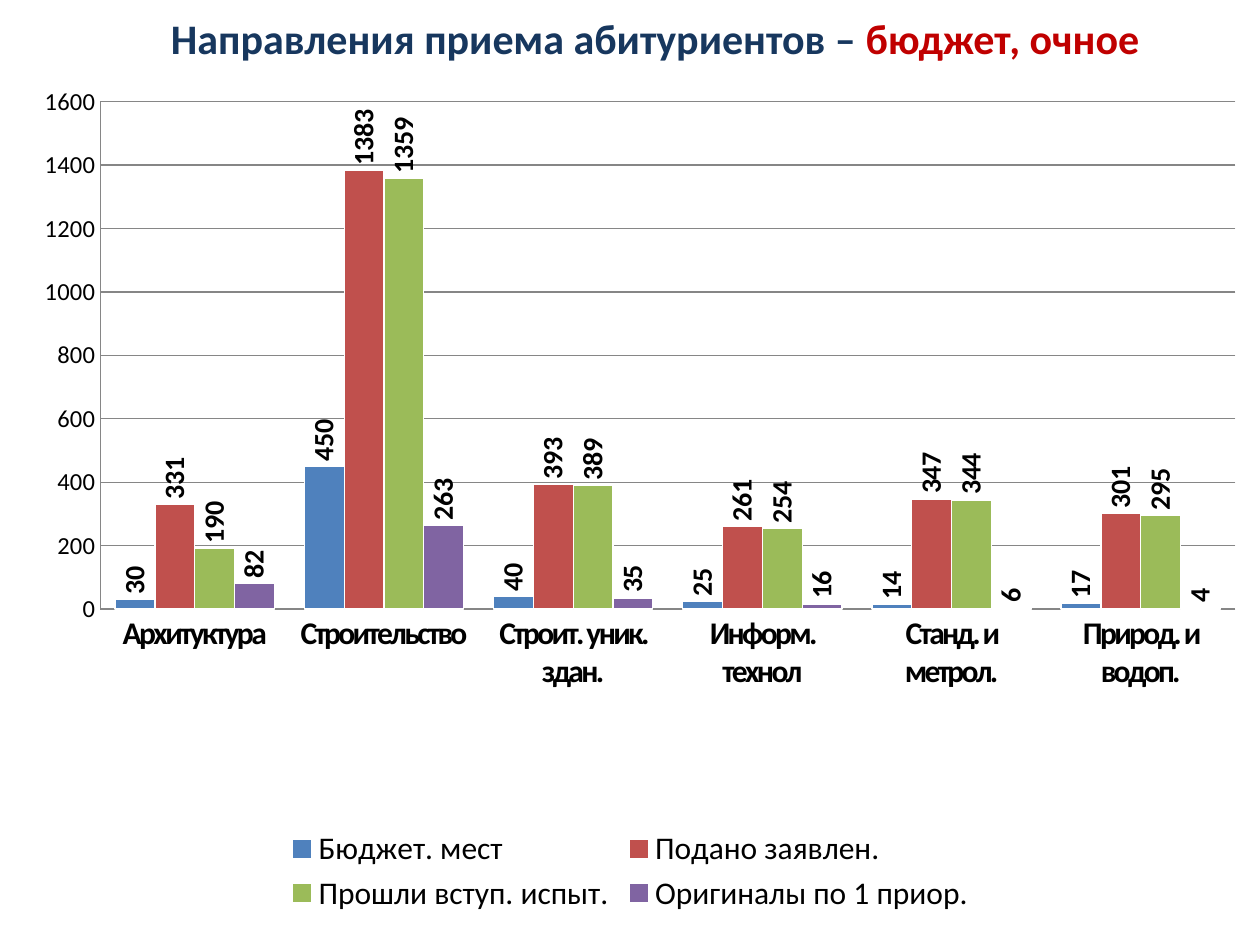
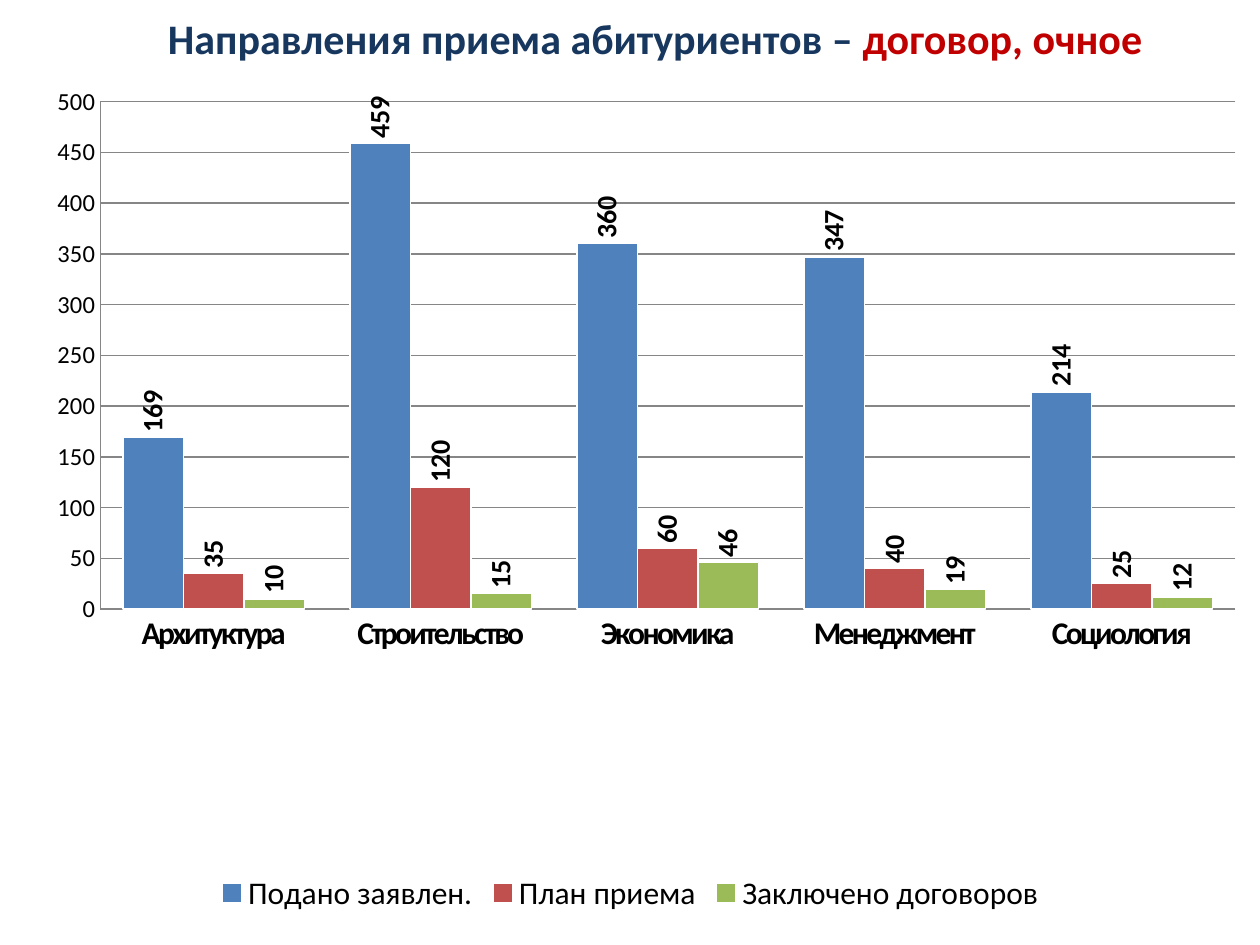
from lxml import etree
from pptx import Presentation
from pptx.chart.data import CategoryChartData
from pptx.dml.color import RGBColor
from pptx.enum.chart import XL_CHART_TYPE, XL_LABEL_POSITION, XL_LEGEND_POSITION, XL_TICK_MARK
from pptx.enum.text import MSO_ANCHOR, PP_ALIGN
from pptx.oxml.ns import qn
from pptx.util import Inches, Pt

COLUMNS = XL_CHART_TYPE.COLUMN_CLUSTERED
OUTSIDE_END = XL_LABEL_POSITION.OUTSIDE_END
LEGEND_BOTTOM = XL_LEGEND_POSITION.BOTTOM
NO_TICK = XL_TICK_MARK.NONE
MIDDLE = MSO_ANCHOR.MIDDLE
CENTER = PP_ALIGN.CENTER

# Shared style
FONT = "Calibri"
BLACK, WHITE, GRID = "000000", "FFFFFF", "868686"
NAVY, CRIMSON = "17375E", "C00000"
SERIES_COLORS = ["4F81BD", "C0504D", "9BBB59", "8064A2"]
TITLE_LEAD = "Направления приема абитуриентов – "

# Shared boxes: left, top, width, height
TITLE_BOX = (0.91, 0.05, 8.58, 0.5)
CHART_BOX = (0.2, 0.6, 9.61, 6.69)
PLOT_AREA = {"x": 0.062, "y": 0.031, "w": 0.938, "h": 0.602}

ADMISSIONS = [
    {
        "form": "бюджет, очное",
        "top": 1600, "step": 200,
        "fields": ["Архитуктура", "Строительство", "Строит. уник. здан.",
                   "Информ. технол", "Станд. и метрол.", "Природ. и водоп."],
        "counts": {
            "Бюджет. мест": [30, 450, 40, 25, 14, 17],
            "Подано заявлен.": [331, 1383, 393, 261, 347, 301],
            "Прошли вступ. испыт.": [190, 1359, 389, 254, 344, 295],
            "Оригиналы по 1 приор.": [82, 263, 35, 16, 6, 4],
        },
    },
    {
        "form": "договор, очное",
        "top": 500, "step": 50,
        "fields": ["Архитуктура", "Строительство", "Экономика",
                   "Менеджмент", "Социология"],
        "counts": {
            "Подано заявлен.": [169, 459, 360, 347, 214],
            "План приема": [35, 120, 60, 40, 25],
            "Заключено договоров": [10, 15, 46, 19, 12],
        },
    },
]


def rgb(color):
    return RGBColor.from_string(color)


def style_font(font, size, color=BLACK, bold=False):
    font.name = FONT
    font.size = Pt(size)
    font.bold = bold
    font.color.rgb = rgb(color)


def style_line(line, color, width=0.75):
    line.color.rgb = rgb(color)
    line.width = Pt(width)


def rotate_text(part, degrees):
    body = part._element.find(qn("c:txPr")).find(qn("a:bodyPr"))
    body.set("rot", str(degrees * 60000))
    body.set("vert", "horz")


def add_title(slide, box, form):
    title = slide.shapes.title
    title.left, title.top, title.width, title.height = map(Inches, box)
    frame = title.text_frame
    frame.word_wrap = True
    frame.vertical_anchor = MIDDLE
    heading = frame.paragraphs[0]
    heading.alignment = CENTER
    for text, color in ((TITLE_LEAD, NAVY), (form, CRIMSON)):
        run = heading.add_run()
        run.text = text
        style_font(run.font, 24, color, True)


def place_plot_area(chart):
    plot_area = chart._chartSpace.chart.plotArea
    for old in plot_area.findall(qn("c:layout")):
        plot_area.remove(old)
    layout = etree.Element(qn("c:layout"))
    manual = etree.SubElement(layout, qn("c:manualLayout"))
    settings = {"layoutTarget": "inner", "xMode": "edge", "yMode": "edge", **PLOT_AREA}
    for tag, value in settings.items():
        etree.SubElement(manual, qn(f"c:{tag}")).set("val", str(value))
    plot_area.insert(0, layout)


def style_axes(chart, top, step):
    fields, counts = chart.category_axis, chart.value_axis
    for axis in (fields, counts):
        axis.major_tick_mark = axis.minor_tick_mark = NO_TICK
        style_line(axis.format.line, GRID)
    # Tightly spaced, level category names
    style_font(fields.tick_labels.font, 18, bold=True)
    rotate_text(fields, 0)
    fields._element.find(".//" + qn("a:defRPr")).set("spc", "-150")
    # Value scale with gridlines
    style_font(counts.tick_labels.font, 14)
    counts.minimum_scale, counts.maximum_scale = 0, top
    counts.major_unit = step
    counts.has_major_gridlines = True
    style_line(counts.major_gridlines.format.line, GRID)


def style_columns(plot):
    plot.gap_width = 75
    plot.overlap = 0
    plot.vary_by_categories = False
    for series, color in zip(plot.series, SERIES_COLORS):
        series.format.fill.solid()
        series.format.fill.fore_color.rgb = rgb(color)
        style_line(series.format.line, WHITE)
        labels = series.data_labels
        labels.show_value = True
        labels.position = OUTSIDE_END
        style_font(labels.font, 16, bold=True)
        rotate_text(labels, -90)


def add_admission_chart(slide, box, admission):
    data = CategoryChartData()
    data.categories = admission["fields"]
    for name, values in admission["counts"].items():
        data.add_series(name, values)
    chart = slide.shapes.add_chart(COLUMNS, *map(Inches, box), data).chart
    chart.has_title = False
    style_font(chart.font, 18)
    chart.has_legend = True
    chart.legend.position = LEGEND_BOTTOM
    chart.legend.include_in_layout = False
    style_font(chart.legend.font, 18)
    place_plot_area(chart)
    style_axes(chart, admission["top"], admission["step"])
    style_columns(chart.plots[0])


def add_admission_slide(deck, admission):
    title_only = deck.slide_layouts[5]
    slide = deck.slides.add_slide(title_only)
    add_admission_chart(slide, CHART_BOX, admission)
    add_title(slide, TITLE_BOX, admission["form"])


def main():
    deck = Presentation()
    deck.slide_width, deck.slide_height = Inches(10), Inches(7.5)
    for admission in ADMISSIONS:
        add_admission_slide(deck, admission)
    deck.save("out.pptx")


if __name__ == "__main__":
    main()
